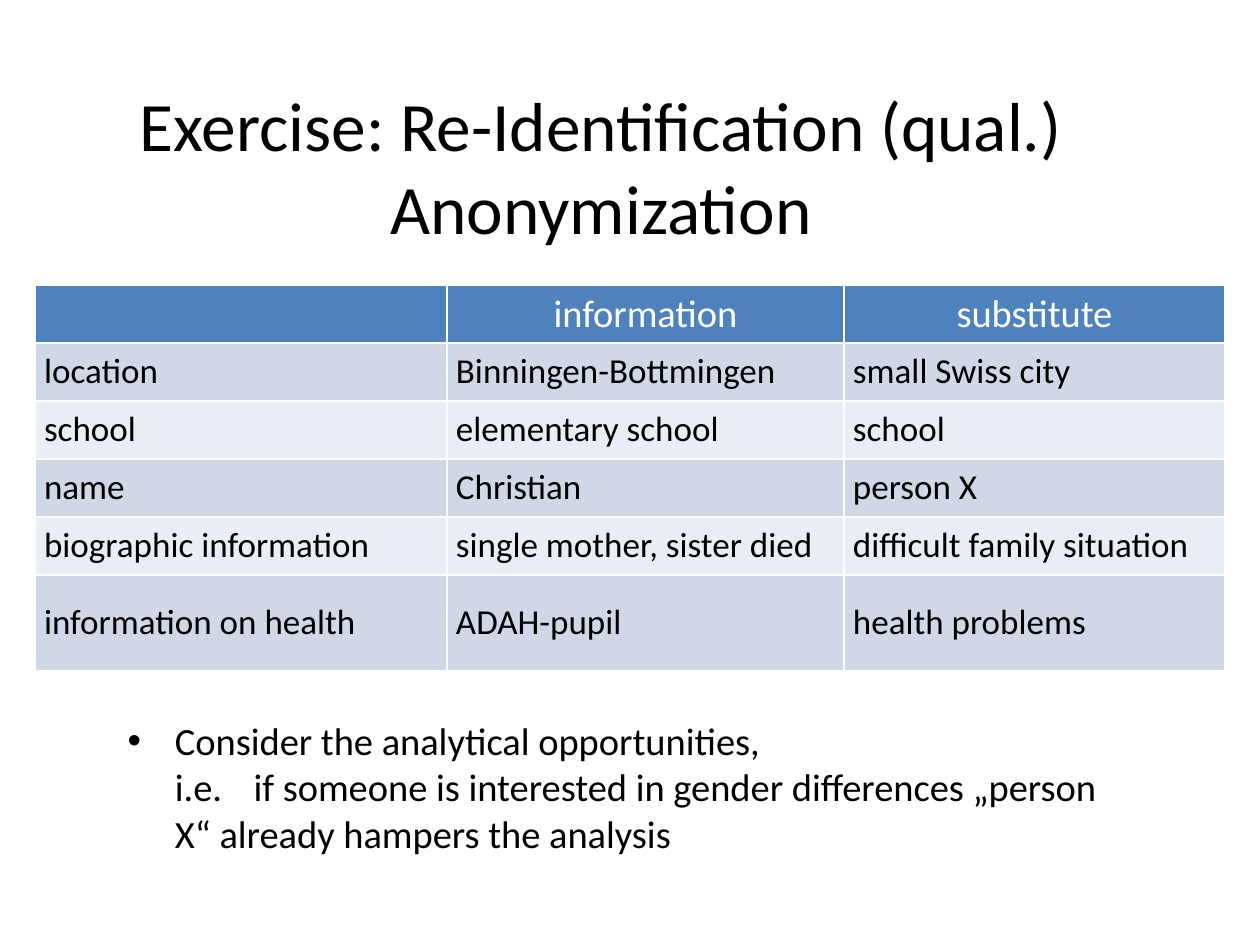
from copy import deepcopy

from lxml import etree
from pptx import Presentation
from pptx.dml.color import RGBColor
from pptx.enum.text import MSO_ANCHOR, MSO_AUTO_SIZE, PP_ALIGN
from pptx.oxml.ns import qn
from pptx.util import Emu, Pt

CENTER, LEFT = PP_ALIGN.CENTER, PP_ALIGN.LEFT
MIDDLE, TOP = MSO_ANCHOR.MIDDLE, MSO_ANCHOR.TOP
NO_AUTOFIT = MSO_AUTO_SIZE.NONE

FONT = "Calibri"
BLACK, WHITE = "000000", "FFFFFF"
HEADER_FILL = "4F81BD"
BAND_FILLS = ("D0D8E8", "E9EDF4")

TITLE = ["Exercise: Re-Identification (qual.)", "Anonymization"]
ADVICE = [
    "Consider the analytical opportunities, ",
    "i.e.\tif someone is interested in gender differences „person X“ "
    "already hampers the analysis",
]
ROWS = [
    ("", "information", "substitute"),
    ("location", "Binningen-Bottmingen", "small Swiss city"),
    ("school", "elementary school", "school"),
    ("name", "Christian", "person X"),
    ("biographic information", "single mother, sister died", "difficult family situation"),
    ("information on health", "ADAH-pupil", "health problems"),
]

# Left, top, width, height in px
TITLE_BOX = (35, 135, 1132, 60)
ADVICE_BOX = (115, 711, 1037, 118)
TABLE_LEFT, TABLE_TOP = 35, 285
COLUMN_WIDTHS = (412, 397, 381)
ROW_HEIGHTS = (58, 58, 58, 58, 58, 96)
CELL_MARGIN = 9


def px(length):
    return Emu(round(length * 914400 / 126))


def color(hex_string):
    return RGBColor.from_string(hex_string)


def write_lines(paragraph, lines, size, ink):
    """Fill one paragraph, with line breaks that keep the size of the text."""
    for number, line in enumerate(lines):
        if number:
            paragraph.add_line_break()
        run = paragraph.add_run()
        run.text = line
        run.font.name = FONT
        run.font.size = Pt(size)
        run.font.bold = False
        run.font.color.rgb = color(ink)
        for line_break in paragraph._p.findall(qn("a:br")):
            if len(line_break) == 0:
                line_break.append(deepcopy(run._r.rPr))


def fill_placeholder(placeholder, box, lines, size, anchor):
    placeholder.left, placeholder.top, placeholder.width, placeholder.height = map(px, box)
    frame = placeholder.text_frame
    frame.word_wrap = True
    frame.auto_size = NO_AUTOFIT
    frame.vertical_anchor = anchor
    write_lines(frame.paragraphs[0], lines, size, BLACK)
    return frame.paragraphs[0]


def set_borders(cell, ink, width):
    properties = cell._tc.get_or_add_tcPr()
    for position, side in enumerate(("lnL", "lnR", "lnT", "lnB")):
        line = etree.Element(qn(f"a:{side}"), w=str(Pt(width)))
        fill = etree.SubElement(line, qn("a:solidFill"))
        etree.SubElement(fill, qn("a:srgbClr"), val=ink)
        properties.insert(position, line)


def fill_cell(cell, text, is_header, fill):
    cell.fill.solid()
    cell.fill.fore_color.rgb = color(fill)
    set_borders(cell, WHITE, 1)
    cell.vertical_anchor = MIDDLE
    cell.margin_left = cell.margin_right = px(CELL_MARGIN)
    cell.margin_top = cell.margin_bottom = 0
    paragraph = cell.text_frame.paragraphs[0]
    paragraph.alignment = CENTER if is_header else LEFT
    if not is_header:
        paragraph.space_before = paragraph.space_after = Pt(6)
    if text:
        write_lines(paragraph, [text], 22 if is_header else 20, WHITE if is_header else BLACK)


def add_substitutes_table(slide):
    table = slide.shapes.add_table(
        len(ROWS), len(COLUMN_WIDTHS), px(TABLE_LEFT), px(TABLE_TOP),
        px(sum(COLUMN_WIDTHS)), px(sum(ROW_HEIGHTS)),
    ).table
    for column, width in zip(table.columns, COLUMN_WIDTHS):
        column.width = px(width)
    for r, (texts, height) in enumerate(zip(ROWS, ROW_HEIGHTS)):
        table.rows[r].height = px(height)
        fill = BAND_FILLS[(r - 1) % 2] if r else HEADER_FILL
        for c, text in enumerate(texts):
            fill_cell(table.cell(r, c), text, r == 0, fill)


def main():
    deck = Presentation()
    deck.slide_width, deck.slide_height = px(1260), px(945)
    slide = deck.slides.add_slide(deck.slide_layouts[1])

    title = fill_placeholder(slide.shapes.title, TITLE_BOX, TITLE, 39.6, MIDDLE)
    title.alignment = CENTER
    advice = fill_placeholder(slide.placeholders[1], ADVICE_BOX, ADVICE, 22, TOP)
    advice.space_before = Pt(4.4)
    add_substitutes_table(slide)

    deck.save("out.pptx")


if __name__ == "__main__":
    main()
